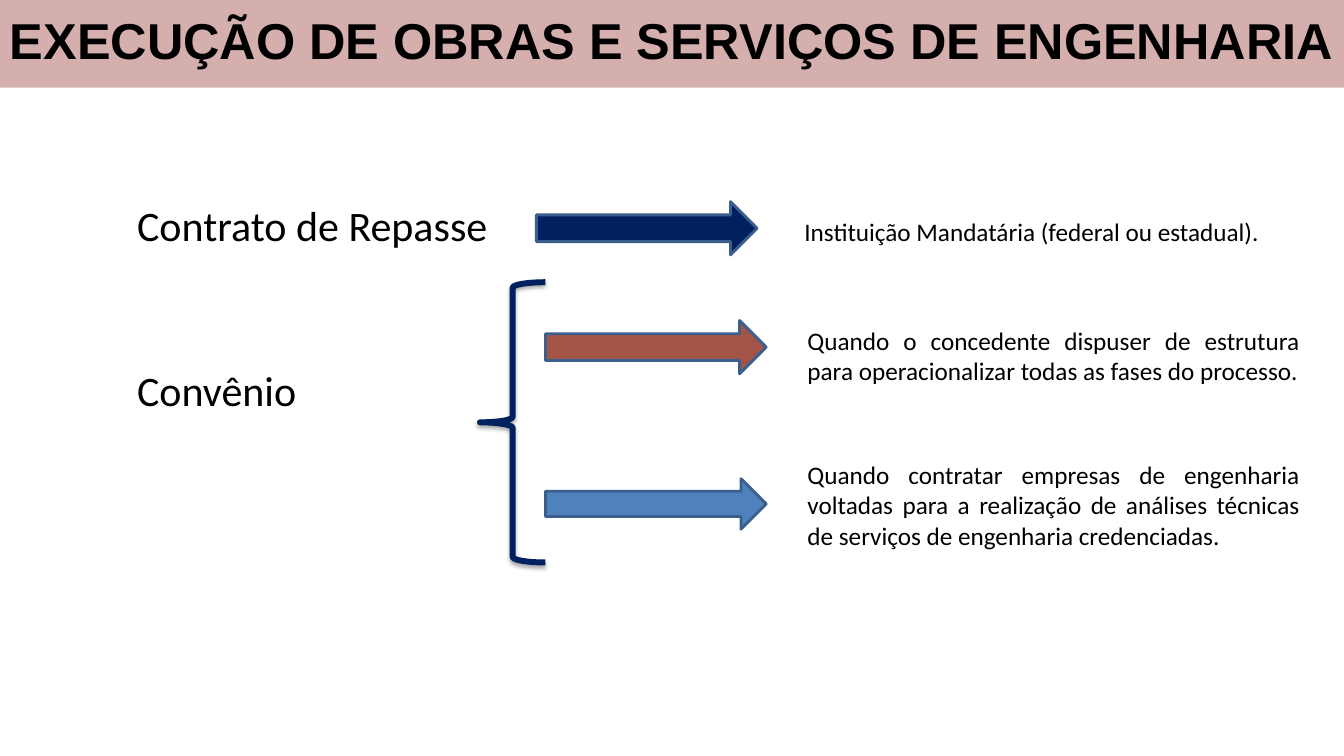
from dataclasses import dataclass

from lxml import etree
from pptx import Presentation
from pptx.dml.color import RGBColor
from pptx.enum.shapes import MSO_SHAPE
from pptx.enum.text import MSO_ANCHOR, MSO_AUTO_SIZE, PP_ALIGN
from pptx.oxml.ns import qn
from pptx.util import Inches, Pt

ARROW = MSO_SHAPE.RIGHT_ARROW
BRACE = MSO_SHAPE.LEFT_BRACE
MIDDLE = MSO_ANCHOR.MIDDLE
TOP = MSO_ANCHOR.TOP
NO_AUTOFIT = MSO_AUTO_SIZE.NONE
CENTER = PP_ALIGN.CENTER
LEFT = PP_ALIGN.LEFT
JUSTIFY = PP_ALIGN.JUSTIFY

BLACK = RGBColor(0x00, 0x00, 0x00)
WINE = RGBColor(0x95, 0x37, 0x35)
NAVY = RGBColor(0x00, 0x20, 0x60)
BRICK = RGBColor(0xA2, 0x55, 0x46)
BLUE = RGBColor(0x4F, 0x81, 0xBD)
OUTLINE = RGBColor(0x3A, 0x5F, 0x8C)


@dataclass
class Box:
    left: float
    top: float
    width: float
    height: float

    def lengths(self) -> list:
        return [Inches(side) for side in (self.left, self.top, self.width, self.height)]


@dataclass
class Arrow:
    box: Box
    color: RGBColor


@dataclass
class Answer:
    box: Box
    text: str


@dataclass
class Label:
    text: str
    space_before: float


TITLE_BOX = Box(0, -0.01, 13.33, 0.88)
LABELS_BOX = Box(1.26, 1.93, 3.9, 2.3)
BRACE_BOX = Box(4.76, 2.8, 0.65, 2.78)

LABELS = [Label("Contrato de Repasse", 0), Label("Convênio", 81.5)]
ARROWS = [
    Arrow(Box(5.32, 2, 2.19, 0.53), NAVY),
    Arrow(Box(5.41, 3.18, 2.19, 0.53), BRICK),
    Arrow(Box(5.41, 4.75, 2.19, 0.5), BLUE),
]
ANSWERS = [
    Answer(Box(7.88, 2.1, 5.08, 0.4), "Instituição Mandatária (federal ou estadual)."),
    Answer(Box(7.91, 3.18, 5.08, 0.71),
           "Quando o concedente dispuser de estrutura para operacionalizar "
           "todas as fases do processo."),
    Answer(Box(7.91, 4.51, 5.08, 1.01),
           "Quando contratar empresas de engenharia voltadas para a realização "
           "de análises técnicas de serviços de engenharia credenciadas."),
]


def place(shape, box: Box) -> None:
    shape.left, shape.top, shape.width, shape.height = box.lengths()


def add_run(paragraph, text: str, size: float, font: str = "Calibri", bold: bool = False) -> None:
    run = paragraph.add_run()
    run.text = text
    run.font.name = font
    run.font.size = Pt(size)
    run.font.bold = bold
    run.font.color.rgb = BLACK


def prepare_frame(shape, anchor):
    frame = shape.text_frame
    frame.word_wrap = True
    frame.auto_size = NO_AUTOFIT
    frame.vertical_anchor = anchor
    return frame


def add_title(slide) -> None:
    title = slide.shapes.title
    place(title, TITLE_BOX)
    title.fill.solid()
    title.fill.fore_color.rgb = WINE
    color = title._element.spPr.find(qn("a:solidFill"))[0]
    etree.SubElement(color, qn("a:alpha"), val="40000")
    frame = prepare_frame(title, MIDDLE)
    frame.margin_left = frame.margin_right = Inches(0.05)
    paragraph = frame.paragraphs[0]
    paragraph.alignment = CENTER
    paragraph.line_spacing = 0.9
    add_run(paragraph, "EXECUÇÃO DE OBRAS E SERVIÇOS DE ENGENHARIA", 36, "Arial", True)


def add_labels(slide) -> None:
    body = slide.placeholders[1]
    place(body, LABELS_BOX)
    frame = prepare_frame(body, TOP)
    for index, label in enumerate(LABELS):
        paragraph = frame.add_paragraph() if index else frame.paragraphs[0]
        paragraph.alignment = LEFT
        paragraph.line_spacing = 1.0
        paragraph.space_before = Pt(label.space_before)
        properties = paragraph._p.get_or_add_pPr()
        properties.set("marL", "0")
        properties.set("indent", "0")
        etree.SubElement(properties, qn("a:buNone"))
        add_run(paragraph, label.text, 30)


def add_arrow(slide, arrow: Arrow) -> None:
    shape = slide.shapes.add_shape(ARROW, *arrow.box.lengths())
    shape.shadow.inherit = False
    shape.fill.solid()
    shape.fill.fore_color.rgb = arrow.color
    shape.line.color.rgb = OUTLINE
    shape.line.width = Pt(2)


def add_brace(slide) -> None:
    brace = slide.shapes.add_shape(BRACE, *BRACE_BOX.lengths())
    brace.fill.background()
    brace.line.color.rgb = NAVY
    brace.line.width = Pt(4.25)
    brace.shadow.inherit = False
    effects = brace._element.spPr.find(qn("a:effectLst"))
    shadow = etree.SubElement(effects, qn("a:outerShdw"), blurRad=str(Pt(3.1)),
                              dist=str(Pt(1.8)), dir="5400000", rotWithShape="0")
    color = etree.SubElement(shadow, qn("a:srgbClr"), val=str(BLACK))
    etree.SubElement(color, qn("a:alpha"), val="35000")


def add_answer(slide, answer: Answer) -> None:
    shape = slide.shapes.add_textbox(*answer.box.lengths())
    paragraph = prepare_frame(shape, TOP).paragraphs[0]
    paragraph.alignment = JUSTIFY
    add_run(paragraph, answer.text, 18)


def main() -> None:
    presentation = Presentation()
    presentation.slide_width = Inches(13.33)
    presentation.slide_height = Inches(7.5)
    slide = presentation.slides.add_slide(presentation.slide_layouts[1])
    add_title(slide)
    add_labels(slide)
    add_brace(slide)
    for arrow in ARROWS:
        add_arrow(slide, arrow)
    for answer in ANSWERS:
        add_answer(slide, answer)
    presentation.save("out.pptx")


if __name__ == "__main__":
    main()
